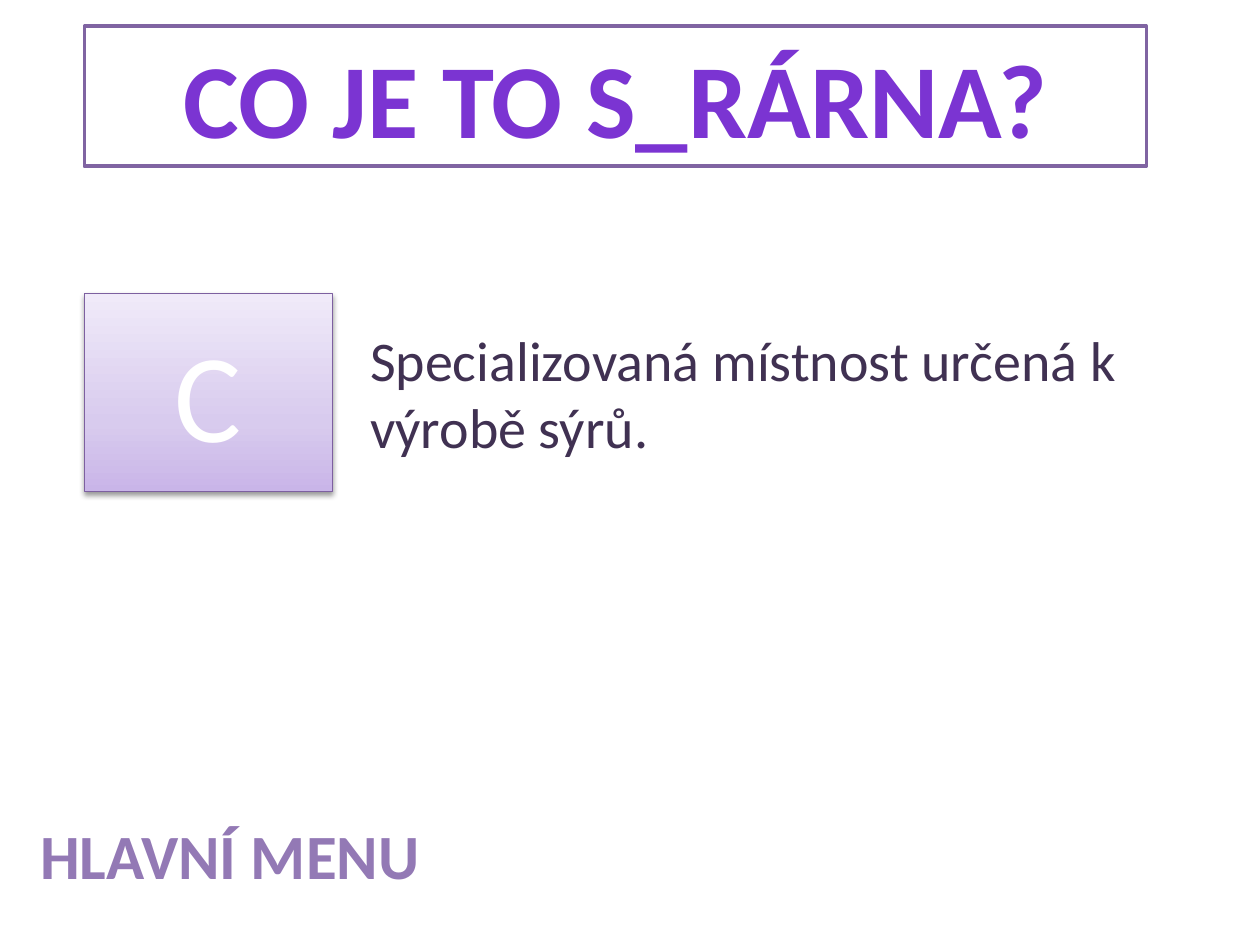
from copy import deepcopy
from dataclasses import dataclass

from lxml.etree import SubElement
from pptx import Presentation
from pptx.dml.color import RGBColor as RGB
from pptx.enum.shapes import MSO_SHAPE as Shape
from pptx.enum.text import MSO_ANCHOR as Anchor, MSO_AUTO_SIZE as AutoSize, PP_ALIGN as Align
from pptx.oxml.ns import qn
from pptx.util import Cm, Pt


@dataclass(frozen=True)
class Theme:
    font: str = "Calibri"
    white: RGB = RGB(0xFF, 0xFF, 0xFF)
    title: RGB = RGB(0x7B, 0x34, 0xD2)
    title_border: RGB = RGB(0x80, 0x64, 0xA2)
    menu: RGB = RGB(0x93, 0x79, 0xB5)
    answer: RGB = RGB(0x40, 0x31, 0x52)
    tile_border: RGB = RGB(0x7D, 0x60, 0xA0)
    tile_bottom: RGB = RGB(0xC9, 0xB5, 0xE8)
    tile_middle: RGB = RGB(0xD8, 0xCB, 0xEE)
    tile_top: RGB = RGB(0xF0, 0xEA, 0xF9)
    title_size: Pt = Pt(60)
    menu_size: Pt = Pt(36)
    letter_size: Pt = Pt(72)
    answer_size: Pt = Pt(32)


THEME = Theme()
LEFT_EDGE = Cm(1.7)


def write(frame, text, size, color, align=Align.LEFT, bold=False):
    frame.word_wrap = True
    paragraph = frame.paragraphs[0]
    paragraph.text = text
    paragraph.alignment = align
    font = paragraph.font
    font.name, font.size, font.bold = THEME.font, size, bold
    font.color.rgb = color


def set_border(shape, color, width):
    shape.line.color.rgb = color
    shape.line.width = width


def add_title(slide, text):
    title = slide.shapes.title
    title.left, title.top, title.width, title.height = LEFT_EDGE, Cm(0.53), Cm(21.41), Cm(2.82)
    title.fill.solid()
    title.fill.fore_color.rgb = THEME.white
    set_border(title, THEME.title_border, Pt(2))
    write(title.text_frame, text, THEME.title_size, THEME.title, Align.CENTER, bold=True)
    title.text_frame.auto_size = AutoSize.SHAPE_TO_FIT_TEXT


def add_label(slide, text, left, top, width, height, size, color, bold=False):
    label = slide.shapes.add_textbox(left, top, width, height)
    write(label.text_frame, text, size, color, bold=bold)
    label.text_frame.auto_size = AutoSize.SHAPE_TO_FIT_TEXT


def fill_tile(tile):
    """Blend three tints from the bottom edge to the top."""
    tile.fill.gradient()
    tile.fill.gradient_angle = 90
    stop_list = tile._element.spPr.find(qn("a:gradFill")).find(qn("a:gsLst"))
    stop_list.insert(1, deepcopy(stop_list[0]))
    tints = ((0, THEME.tile_bottom), (0.35, THEME.tile_middle), (1, THEME.tile_top))
    for stop, (position, color) in zip(tile.fill.gradient_stops, tints):
        stop.position = position
        stop.color.rgb = color


def cast_shadow(shape):
    shape.shadow.inherit = False
    effects = shape._element.spPr.find(qn("a:effectLst"))
    shadow = SubElement(effects, qn("a:outerShdw"), blurRad=str(Pt(3.1)), dist=str(Pt(1.6)),
                        dir="5400000", rotWithShape="0")
    black = SubElement(shadow, qn("a:srgbClr"), val="000000")
    SubElement(black, qn("a:alpha"), val="38000")


def add_letter_tile(slide, letter):
    tile = slide.shapes.add_shape(Shape.RECTANGLE, LEFT_EDGE, Cm(5.92), Cm(5), Cm(3.99))
    fill_tile(tile)
    set_border(tile, THEME.tile_border, Pt(0.75))
    cast_shadow(tile)
    write(tile.text_frame, letter, THEME.letter_size, THEME.white, Align.CENTER)
    tile.text_frame.vertical_anchor = Anchor.MIDDLE


def main():
    deck = Presentation()
    deck.slide_width, deck.slide_height = Cm(25.4), Cm(19.05)
    slide = deck.slides.add_slide(deck.slide_layouts.get_by_name("Title Only"))

    add_title(slide, "CO JE TO S_RÁRNA?")
    add_label(slide, "HLAVNÍ MENU", Cm(0.56), Cm(16.33), Cm(15.8), Cm(1.8),
              THEME.menu_size, THEME.menu, bold=True)
    add_letter_tile(slide, "C")
    add_label(slide, "Specializovaná místnost určená k výrobě sýrů.",
              Cm(7.21), Cm(6.43), Cm(17.81), Cm(3), THEME.answer_size, THEME.answer)

    deck.save("out.pptx")


if __name__ == "__main__":
    main()
